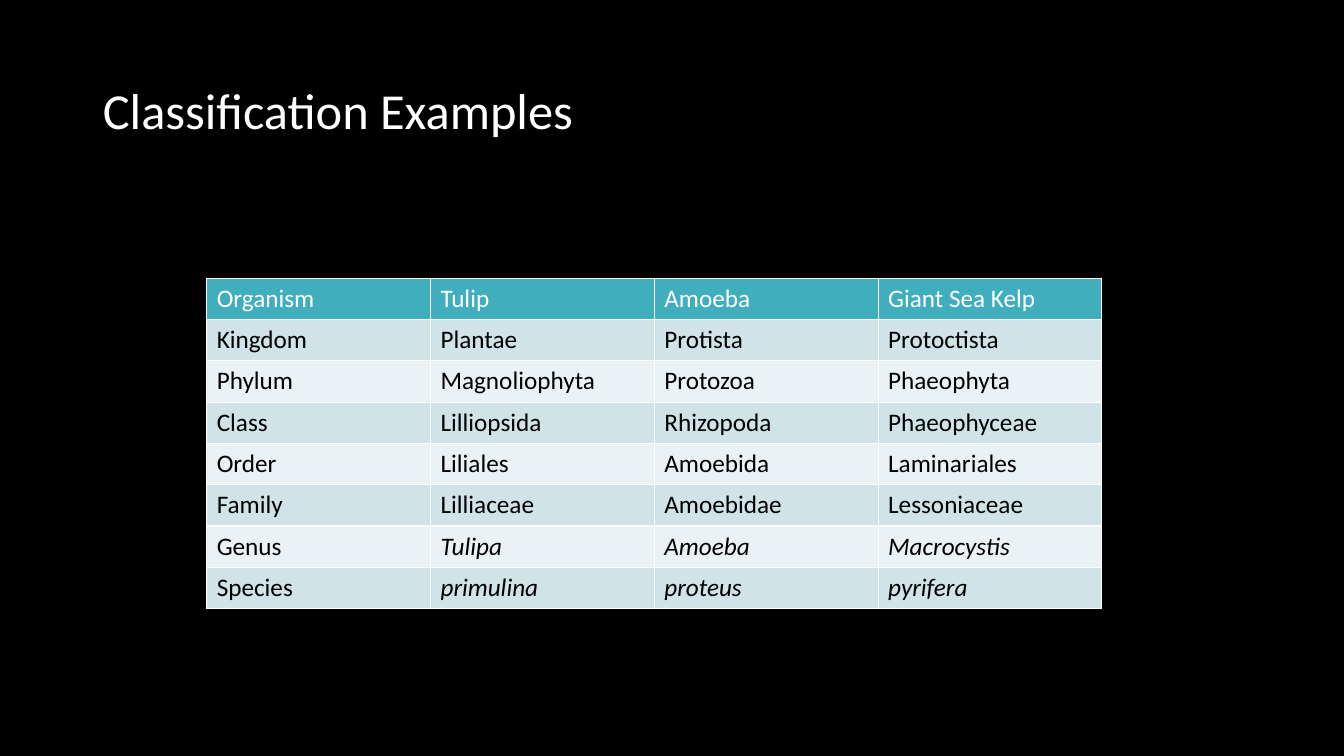
from lxml import etree
from pptx import Presentation
from pptx import util as u
from pptx.dml.color import RGBColor
from pptx.enum import text
from pptx.oxml.ns import qn

HUES = {"back": "000000", "light": "FFFFFF", "dark": "000000",
        "head": "41AEBD", "odd": "CFE3E8", "even": "E9F2F4"}
FONT = "Calibri"
RANKS = [
    ["Organism", "Tulip", "Amoeba", "Giant Sea Kelp"],
    ["Kingdom", "Plantae", "Protista", "Protoctista"],
    ["Phylum", "Magnoliophyta", "Protozoa", "Phaeophyta"],
    ["Class", "Lilliopsida", "Rhizopoda", "Phaeophyceae"],
    ["Order", "Liliales", "Amoebida", "Laminariales"],
    ["Family", "Lilliaceae", "Amoebidae", "Lessoniaceae"],
    ["Genus", "Tulipa", "Amoeba", "Macrocystis"],
    ["Species", "primulina", "proteus", "pyrifera"],
]
COL, ROW = 2.22, 0.41


def write(para, words, size, hue):
    run = para.add_run()
    run.text = words
    run.font.name = FONT
    run.font.size = u.Pt(size)
    run.font.bold = False
    run.font.color.rgb = RGBColor.from_string(HUES[hue])
    return run


def edge(cell):
    props = cell._tc.get_or_add_tcPr()
    for side in ("lnL", "lnR", "lnT", "lnB"):
        line = etree.SubElement(props, qn("a:" + side), w=str(u.Pt(1)))
        fill = etree.SubElement(line, qn("a:solidFill"))
        etree.SubElement(fill, qn("a:srgbClr"), val=HUES["light"])


# Slide and background
deck = Presentation()
deck.slide_width, deck.slide_height = u.Inches(13.33), u.Inches(7.5)
slide = deck.slides.add_slide(deck.slide_layouts[5])
slide.background.fill.solid()
slide.background.fill.fore_color.rgb = RGBColor.from_string(HUES["back"])

# Title
title = slide.shapes.title
title.left, title.top = u.Inches(0.92), u.Inches(0.4)
title.width, title.height = u.Inches(11.5), u.Inches(1.45)
title.text_frame.vertical_anchor = text.MSO_ANCHOR.MIDDLE
para = title.text_frame.paragraphs[0]
para.alignment = text.PP_ALIGN.LEFT
para.line_spacing = 0.9
write(para, "Classification Examples", 36, "light")

# Table of ranks
rows, cols = len(RANKS), len(RANKS[0])
grid = slide.shapes.add_table(rows, cols, u.Inches(2.05), u.Inches(2.76),
                              u.Inches(cols * COL), u.Inches(rows * ROW)).table
for col in grid.columns:
    col.width = u.Inches(COL)
for r, names in enumerate(RANKS):
    grid.rows[r].height = u.Inches(ROW)
    band = "head" if r == 0 else "odd" if r % 2 else "even"
    for c, name in enumerate(names):
        cell = grid.cell(r, c)
        edge(cell)
        cell.fill.solid()
        cell.fill.fore_color.rgb = RGBColor.from_string(HUES[band])
        run = write(cell.text_frame.paragraphs[0], name, 18,
                    "dark" if r else "light")
        # Genus and species names are set in italics
        run.font.italic = r >= rows - 2 and c > 0

deck.save("out.pptx")
